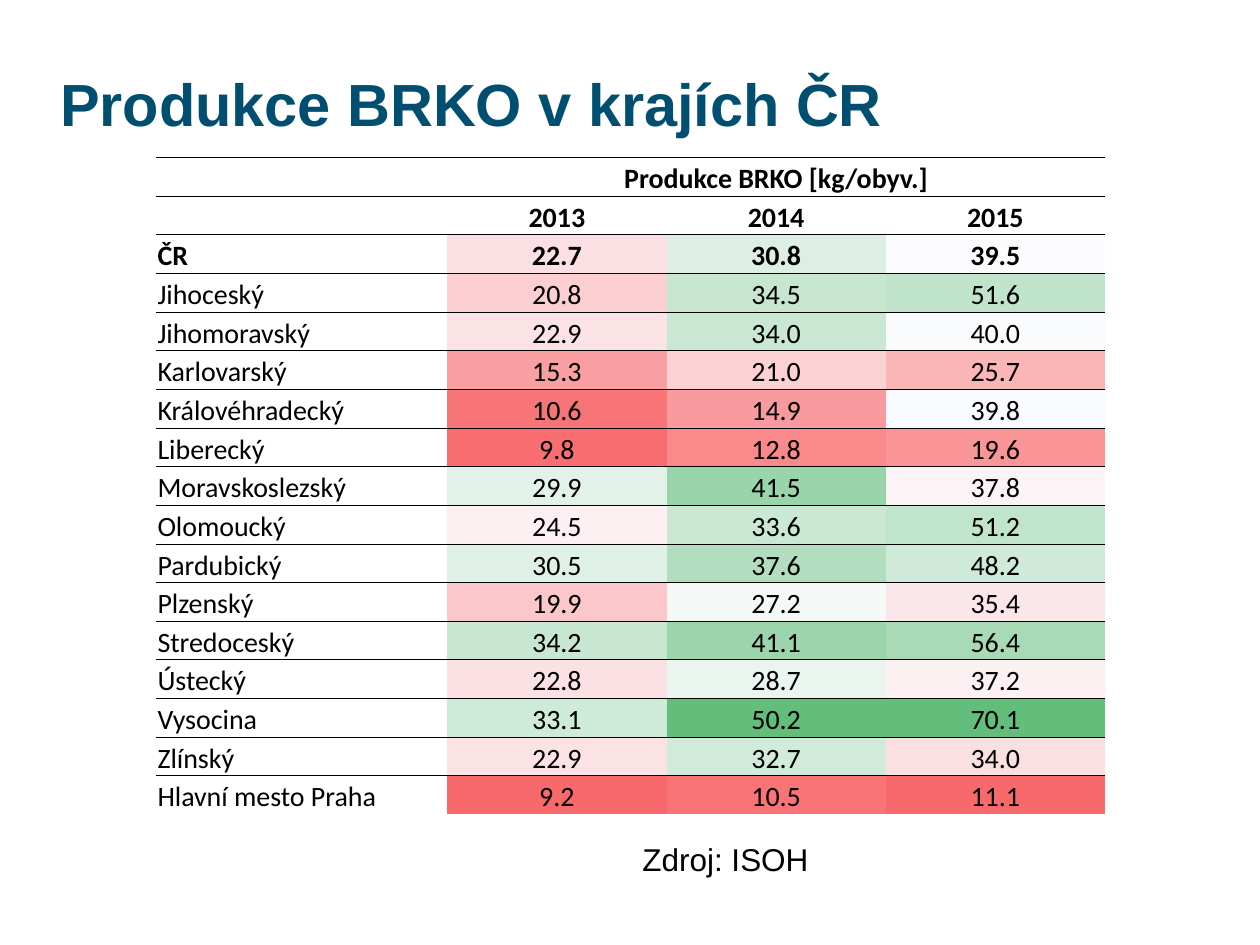
import pptx
import pptx.util
import pptx.dml.color
import pptx.enum.text
import pptx.oxml
import pptx.oxml.ns

Inches = pptx.util.Inches
ANCHOR = pptx.enum.text.MSO_ANCHOR
ALIGN = pptx.enum.text.PP_ALIGN

# Content
TITLE = "Produkce BRKO v krajích ČR"
SOURCE = "Zdroj: ISOH"
MEASURE = "Produkce BRKO [kg/obyv.]"
YEARS = ("2013", "2014", "2015")
REGIONS = [
    ("ČR", 22.7, 30.8, 39.5),
    ("Jihoceský", 20.8, 34.5, 51.6),
    ("Jihomoravský", 22.9, 34.0, 40.0),
    ("Karlovarský", 15.3, 21.0, 25.7),
    ("Královéhradecký", 10.6, 14.9, 39.8),
    ("Liberecký", 9.8, 12.8, 19.6),
    ("Moravskoslezský", 29.9, 41.5, 37.8),
    ("Olomoucký", 24.5, 33.6, 51.2),
    ("Pardubický", 30.5, 37.6, 48.2),
    ("Plzenský", 19.9, 27.2, 35.4),
    ("Stredoceský", 34.2, 41.1, 56.4),
    ("Ústecký", 22.8, 28.7, 37.2),
    ("Vysocina", 33.1, 50.2, 70.1),
    ("Zlínský", 22.9, 32.7, 34.0),
    ("Hlavní mesto Praha", 9.2, 10.5, 11.1),
]
# Year columns that share one heat scale
SCALE_GROUPS = ((1, 2), (3,))
HEADER_ROWS = 2

THEME = {
    "title": {"name": "Arial", "size": 34, "bold": True, "color": "004F71"},
    "source": {"name": "Arial", "size": 18, "bold": False, "color": "000000"},
    "strong": {"name": "Calibri", "size": 16, "bold": True, "color": "000000"},
    "body": {"name": "Calibri", "size": 16, "bold": False, "color": "000000"},
    "rule": "000000",
    "low": (248, 105, 107),
    "middle": (252, 252, 255),
    "high": (99, 190, 123),
}


def set_text(frame, text, style, align):
    para = frame.paragraphs[0]
    para.alignment = align
    if text:
        span = para.add_run()
        span.text = text
        font = span.font
    else:
        font = para.font
    look = THEME[style]
    values = {"name": look["name"], "size": pptx.util.Pt(look["size"]), "bold": look["bold"]}
    for key, value in values.items():
        setattr(font, key, value)
    font.color.rgb = pptx.dml.color.RGBColor.from_string(look["color"])
    return para


def add_text(page, place, text, style, wrap, anchor, align):
    box = page.shapes.add_textbox(*map(Inches, place))
    box.text_frame.word_wrap = wrap
    box.text_frame.vertical_anchor = anchor
    return set_text(box.text_frame, text, style, align)


def heat_color(value, scale):
    """Colour between low, median and high."""
    low, median, high = scale
    if value <= median:
        start, end = THEME["low"], THEME["middle"]
        share = (value - low) / (median - low)
    else:
        start, end = THEME["middle"], THEME["high"]
        share = (value - median) / (high - median)
    return pptx.dml.color.RGBColor(*(round(a + (b - a) * share) for a, b in zip(start, end)))


def heat_scales():
    scales = {}
    for group in SCALE_GROUPS:
        values = sorted(row[column] for row in REGIONS for column in group)
        half = len(values) // 2
        median = (values[half] + values[-half - 1]) / 2
        for column in group:
            scales[column] = (values[0], median, values[-1])
    return scales


def set_borders(cell, ruled_sides):
    properties = cell._tc.get_or_add_tcPr()
    for index, side in enumerate("LRTB"):
        if side in ruled_sides:
            width = pptx.util.Pt(0.5)
            paint = f'<a:solidFill><a:srgbClr val="{THEME["rule"]}"/></a:solidFill>'
        else:
            width, paint = 0, "<a:noFill/>"
        line = f'<a:ln{side} {pptx.oxml.ns.nsdecls("a")} w="{width}">{paint}</a:ln{side}>'
        properties.insert(index, pptx.oxml.parse_xml(line))


def add_region_table(page):
    rows = [("", MEASURE, "", ""), ("", *YEARS), *REGIONS]
    frame = page.shapes.add_table(len(rows), 4, *map(Inches, (1.24, 1.25, 7.52, 5.22)))
    table = frame.table
    table.first_row = table.horz_banding = False
    for column, width in zip(table.columns, (2.31, 1.74, 1.74, 1.74)):
        column.width = Inches(width)
    for row in table.rows:
        row.height = Inches(5.22 / len(rows))
    table.cell(0, 1).merge(table.cell(0, 3))

    cell_format = {
        "margin_left": Inches(0.01),
        "margin_right": Inches(0.01),
        "margin_top": Inches(0.01),
        "margin_bottom": 0,
        "vertical_anchor": ANCHOR.BOTTOM,
    }
    scales = heat_scales()
    for r, row in enumerate(rows):
        # Headers and the national row are bold
        style = "strong" if r <= HEADER_ROWS else "body"
        for c, value in enumerate(row):
            cell = table.cell(r, c)
            for key, setting in cell_format.items():
                setattr(cell, key, setting)
            set_borders(cell, "T" if r == len(rows) - 1 else "TB")
            if isinstance(value, float):
                cell.fill.solid()
                cell.fill.fore_color.rgb = heat_color(value, scales[c])
                value = f"{value:.1f}"
            else:
                cell.fill.background()
            set_text(cell.text_frame, value, style, ALIGN.CENTER if c else ALIGN.LEFT)


def main():
    deck = pptx.Presentation()
    deck.slide_width, deck.slide_height = Inches(10), Inches(7.5)
    page = deck.slides.add_slide(deck.slide_layouts[6])

    # Title
    title = add_text(page, (0.38, 0.19, 9.23, 1.32), TITLE, "title", True, ANCHOR.MIDDLE, ALIGN.LEFT)
    title.line_spacing = 0.9
    # Heat table
    add_region_table(page)
    # Source line
    add_text(page, (5, 6.62, 1.53, 0.4), SOURCE, "source", False, ANCHOR.TOP, ALIGN.LEFT)

    deck.save("out.pptx")


if __name__ == "__main__":
    main()
